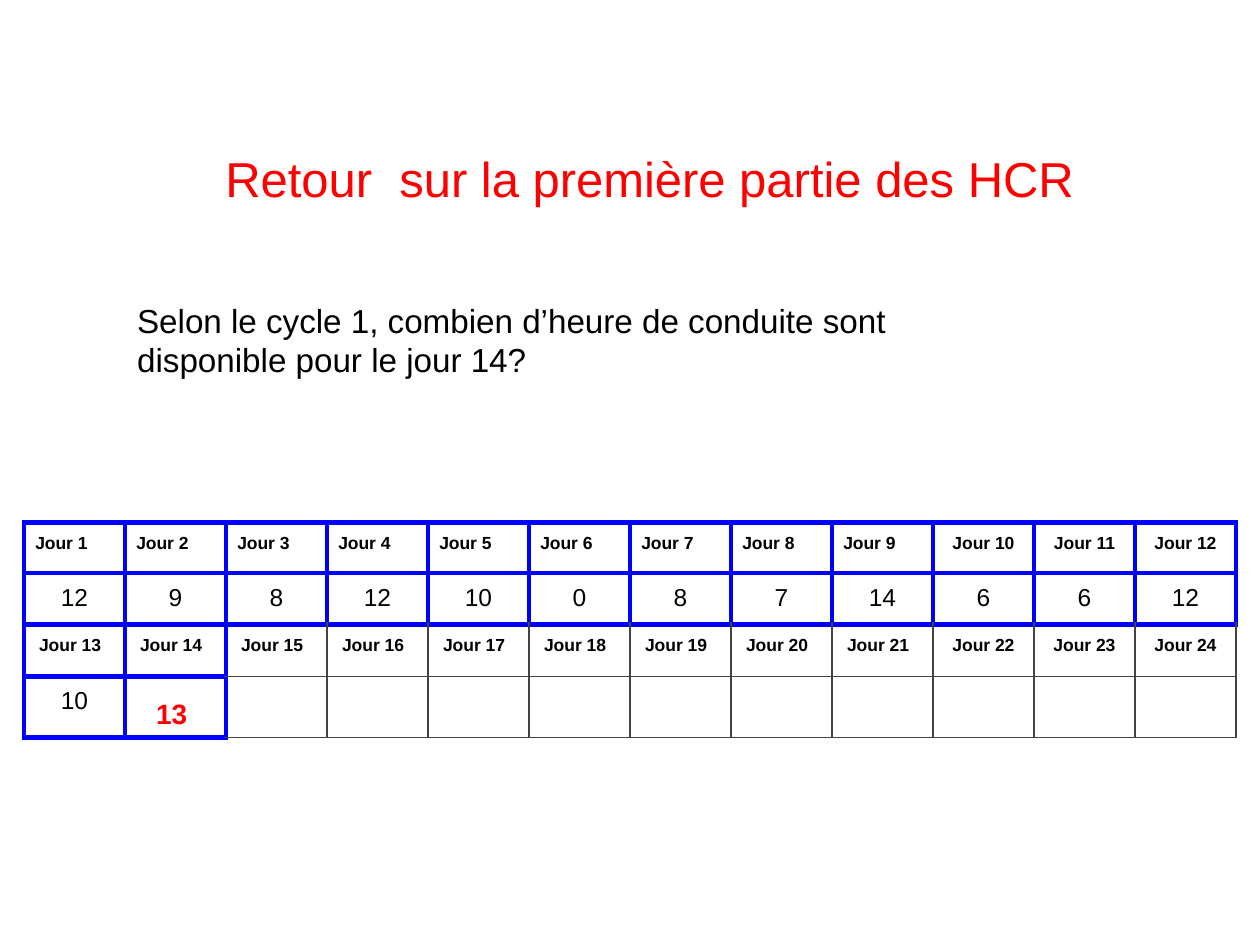
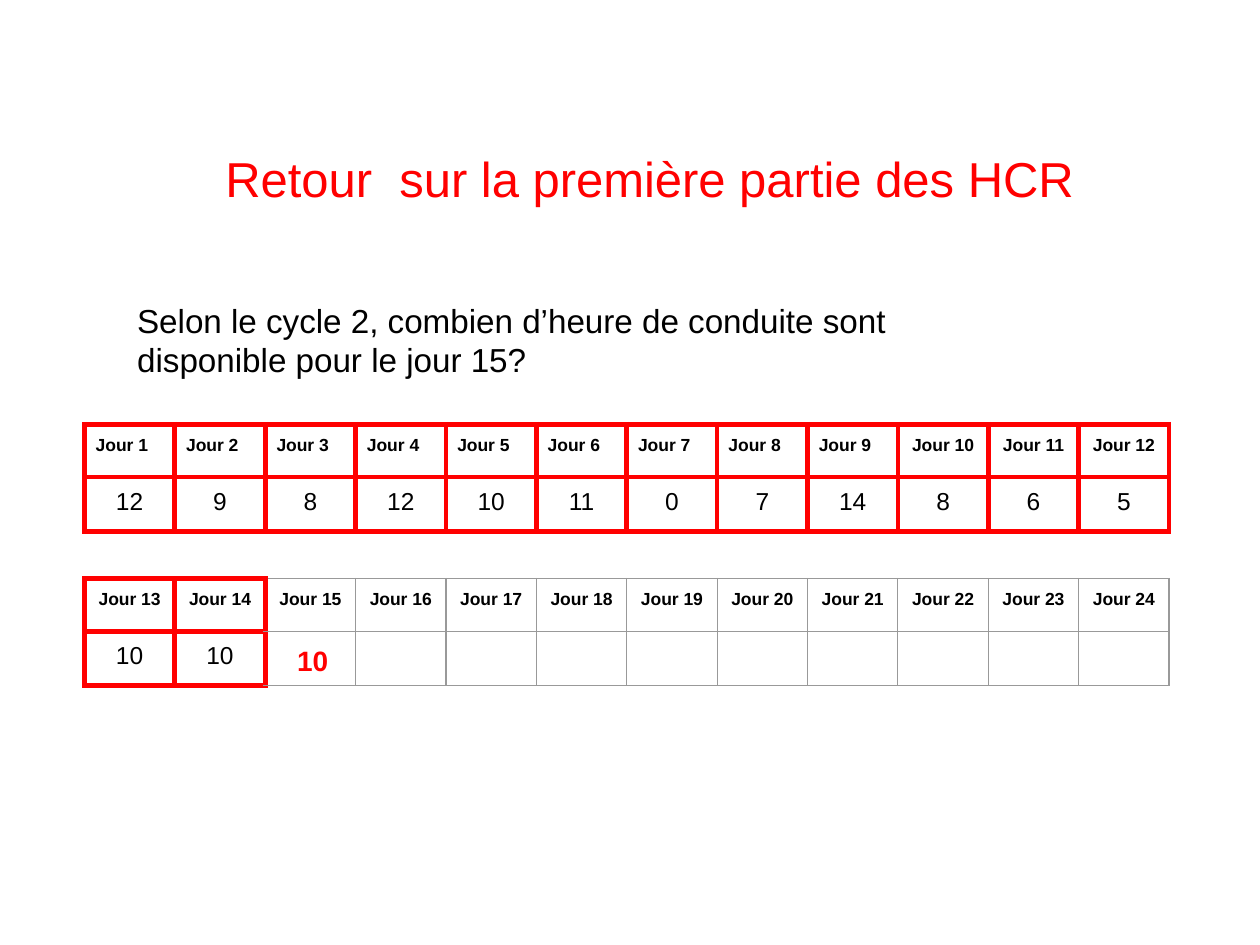
from lxml import etree
from pptx import Presentation
from pptx import util as u
from pptx.dml.color import RGBColor
from pptx.enum import text
from pptx.oxml.ns import qn

# Shared look
FONT, RED, BLUE, BLACK = "Arial", "FF0000", "0000FF", "000000"
TITLE = "Retour  sur la première partie des HCR"
DAYS, LAST = 12, 14  # days per band, last day already worked

deck = Presentation()
deck.slide_width, deck.slide_height = u.Inches(10), u.Inches(7.5)
wide, high = deck.slide_width / 100, deck.slide_height / 100  # one percent


def style(para, size, color, bold=False):
    for run in para.runs:
        run.font.name, run.font.size, run.font.bold = FONT, u.Pt(size), bold
        run.font.color.rgb = RGBColor.from_string(color)


def put(slide, area, words, size, color, bold=False, pad=0.1):
    x, y, w, h = area
    box = slide.shapes.add_textbox(int(x * wide), int(y * high), int(w * wide), int(h * high))
    frame = box.text_frame
    frame.word_wrap = True
    frame.margin_top, frame.margin_bottom = u.Inches(pad + 0.03), u.Inches(pad)
    frame.text = words
    style(frame.paragraphs[0], size, color, bold)


# Each table: left, top, width, row heights (percent), first day, indents by band, hours
pages = [
    dict(cycle=1, day=14, reply="13", spot=(11.4, 72, 4.6, 4.9), main=BLUE, thin="434343",
         tables=[(1.9, 55.3, 96.2, [5.33, 5.47, 5.47, 6.47], 1, [0.09, 0.12],
                  [[12, 9, 8, 12, 10, 0, 8, 7, 14, 6, 6, 12], [10]])]),
    dict(cycle=2, day=15, reply="10", spot=(22.6, 66.4, 4.6, 4.9), main=RED, thin="999999",
         tables=[(6.7, 44.9, 86.1, [5.6, 5.73], 1, [0.09],
                  [[12, 9, 8, 12, 10, 11, 0, 7, 14, 8, 6, 5]]),
                 (6.7, 61.2, 86.1, [5.6, 5.73], 13, [None], [[10, 10]])]),
]

for page in pages:
    slide = deck.slides.add_slide(deck.slide_layouts[6])

    # Title and question
    put(slide, (16.9, 14.7, 71.3, 6.7), TITLE, 28, RED, pad=0.05)
    put(slide, (9.9, 30, 73.6, 12),
        f"Selon le cycle {page['cycle']}, combien d’heure de conduite sont "
        f"disponible pour le jour {page['day']}?", 19, BLACK)

    # Day tables
    for x, y, w, rows, first, dents, hours in page["tables"]:
        grid = slide.shapes.add_table(len(rows), DAYS, int(x * wide), int(y * high),
                                      int(w * wide), int(sum(rows) * high)).table
        grid.first_row = grid.horz_banding = False
        for col in grid.columns:
            col.width = int(w * wide / DAYS)

        for r, tall in enumerate(rows):
            grid.rows[r].height = int(tall * high)
            band, head = r // 2, r % 2 == 0
            for c in range(DAYS):
                day = first + band * DAYS + c
                cell = grid.cell(r, c)
                cell.margin_left = cell.margin_right = cell.margin_bottom = 0
                cell.margin_top = u.Inches(0.09)

                # Day name or hours
                para = cell.text_frame.paragraphs[0]
                para.font.size = u.Pt(10 if head else 14)
                para.alignment = text.PP_ALIGN.CENTER
                if head:
                    para.text = f"Jour {day}"
                    if c < 9 and dents[band]:
                        para.alignment = text.PP_ALIGN.LEFT
                        cell.margin_left = u.Inches(dents[band])
                elif c < len(hours[band]):
                    para.text = str(hours[band][c])
                style(para, 10 if head else 14, BLACK, head)

                # An edge is thick when a worked day lies on either side
                props = cell._tc.get_or_add_tcPr()
                sides = {"L": (r, c - 1), "R": (r, c + 1),
                         "T": (max(r - 1, 0), c), "B": (r + 1, c)}
                for side, (nr, nc) in sides.items():
                    near = first + nr // 2 * DAYS + nc
                    bold = min(day, near) <= LAST if nr < len(rows) else day <= LAST
                    if side == "L" and c == 0:
                        bold = day <= LAST
                    line = etree.SubElement(props, qn(f"a:ln{side}"),
                                            w=str(u.Pt(3 if bold else 0.75)))
                    fill = etree.SubElement(line, qn("a:solidFill"))
                    etree.SubElement(fill, qn("a:srgbClr"),
                                     val=page["main"] if bold else page["thin"])
                cell.fill.background()

    # Answer
    put(slide, page["spot"], page["reply"], 16, RED, bold=True)

deck.save("out.pptx")
